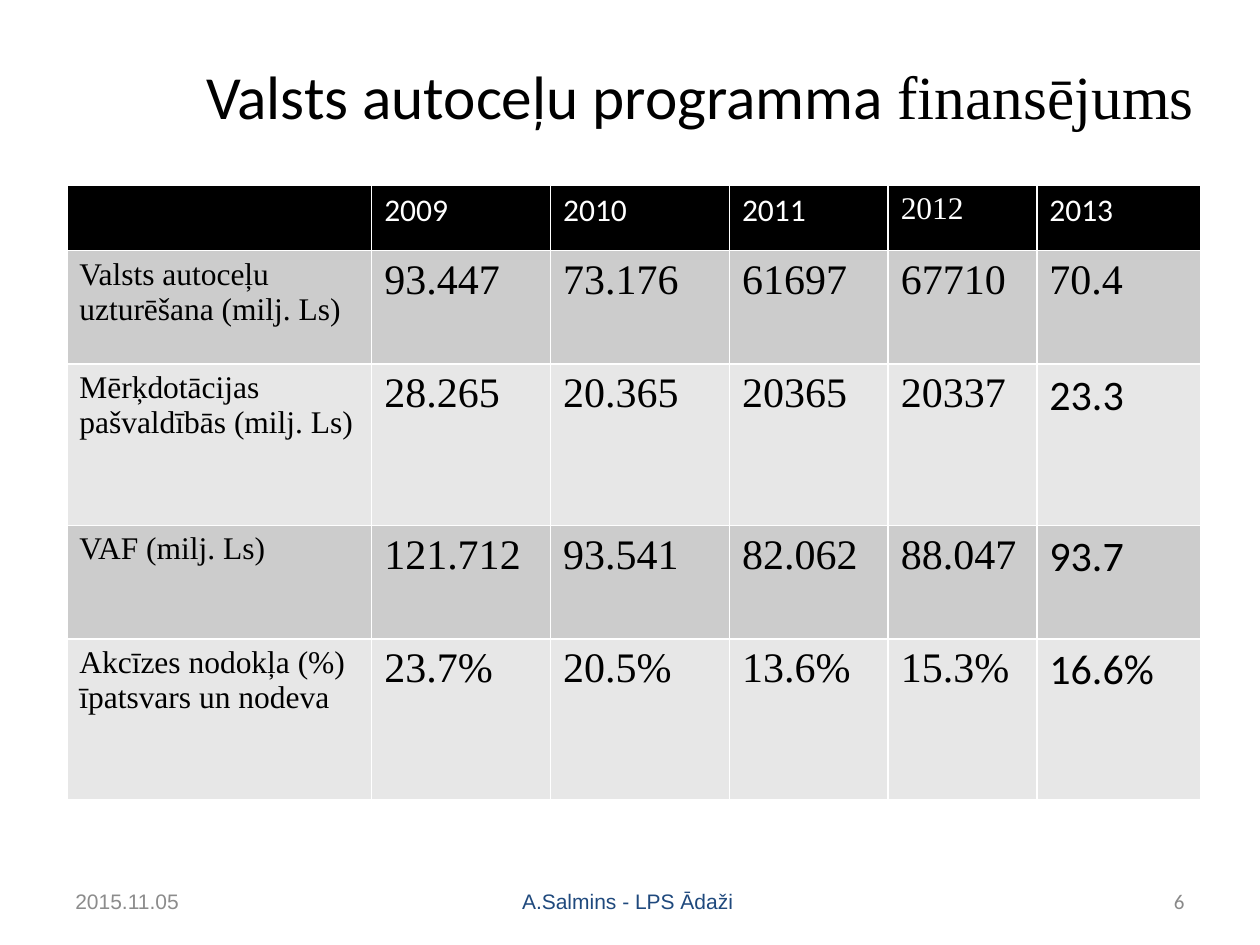
from lxml.etree import SubElement
from pptx import Presentation
from pptx.dml.color import RGBColor
from pptx.enum.text import MSO_ANCHOR, PP_ALIGN
from pptx.oxml.ns import qn
from pptx.util import Inches, Pt

COLORS = {
    "text": "000000",
    "header": "000000",
    "white": "FFFFFF",
    "band": ["CCCCCC", "E7E7E7"],
    "footer": "1F497D",
    "number": "898989",
    "date": "8C8C8C",
}
SANS, SERIF, FOOT = "Calibri", "Times New Roman", "Arial"
GRID_COLS, GRID_ROWS = 100, 75

COL_WIDTHS = [24.2, 14.2, 14.2, 12.6, 11.8, 13]
ROW_HEIGHTS = [5.2, 9, 12.8, 9, 12.8]
ROWS = [
    ["", "2009", "2010", "2011", "2012", "2013"],
    ["Valsts autoceļu uzturēšana (milj. Ls)", "93.447", "73.176", "61697", "67710", "70.4"],
    ["Mērķdotācijas pašvaldībās (milj. Ls)", "28.265", "20.365", "20365", "20337", "23.3"],
    ["VAF (milj. Ls)", "121.712", "93.541", "82.062", "88.047", "93.7"],
    ["Akcīzes nodokļa (%) īpatsvars un nodeva", "23.7%", "20.5%", "13.6%", "15.3%", "16.6%"],
]


class Deck:
    def __init__(self):
        self.prs = Presentation()
        self.prs.slide_width, self.prs.slide_height = Inches(10), Inches(7.5)
        self.slide = self.prs.slides.add_slide(self.prs.slide_layouts[6])

    def x(self, cols):
        return round(self.prs.slide_width * cols / GRID_COLS)

    def y(self, rows):
        return round(self.prs.slide_height * rows / GRID_ROWS)

    def style(self, p, size, color, font=None):
        p.font.size = Pt(size)
        p.font.bold = False
        p.font.color.rgb = RGBColor.from_string(color)
        if font:
            p.font.name = font

    def text(self, left, top, width, height, runs, size, color, align):
        sp = self.slide.shapes.add_textbox(self.x(left), self.y(top), self.x(width), self.y(height))
        tf = sp.text_frame
        tf.word_wrap = True
        tf.vertical_anchor = MSO_ANCHOR.MIDDLE
        p = tf.paragraphs[0]
        p.alignment = align
        self.style(p, size, color)
        for content, font in runs:
            r = p.add_run()
            r.text = content
            r.font.name = font

    def borders(self, cell, color, width):
        tc_pr = cell._tc.get_or_add_tcPr()
        for i, side in enumerate(("lnL", "lnR", "lnT", "lnB")):
            ln = SubElement(tc_pr, qn(f"a:{side}"), w=str(Pt(width)))
            fill = SubElement(ln, qn("a:solidFill"))
            SubElement(fill, qn("a:srgbClr"), val=color)
            tc_pr.insert(i, ln)

    def cell(self, cell, content, size, color, font, fill):
        cell.fill.solid()
        cell.fill.fore_color.rgb = RGBColor.from_string(fill)
        self.borders(cell, COLORS["white"], 1)
        cell.text = content
        self.style(cell.text_frame.paragraphs[0], size, color, font)

    def table(self, left, top, rows, widths, heights):
        frame = self.slide.shapes.add_table(
            len(rows), len(widths), self.x(left), self.y(top), self.x(sum(widths)), self.y(sum(heights))
        )
        tbl = frame.table
        for column, width in zip(tbl.columns, widths):
            column.width = self.x(width)
        for row, height in zip(tbl.rows, heights):
            row.height = self.y(height)
        last = len(widths) - 1
        for i, row in enumerate(rows):
            for j, content in enumerate(row):
                if i == 0:
                    font = SERIF if content == "2012" else SANS
                    size, color, fill = 18, COLORS["white"], COLORS["header"]
                else:
                    font = SANS if j == last and i > 1 else SERIF
                    size = 24 if j else 18
                    color, fill = COLORS["text"], COLORS["band"][(i - 1) % 2]
                self.cell(tbl.cell(i, j), content, size, color, font, fill)


def main():
    s = Deck()
    title = [("Valsts autoceļu programma ", SANS), ("finansējums", SERIF)]
    s.text(11.4, 3.6, 88.3, 7.9, title, 35, COLORS["text"], PP_ALIGN.CENTER)
    s.table(5.3, 14.7, ROWS, COL_WIDTHS, ROW_HEIGHTS)
    for left, width, content, font, color, align in (
        (34.2, 31.7, "A.Salmins - LPS Ādaži ", FOOT, "footer", PP_ALIGN.CENTER),
        (71.7, 23.3, "6", SANS, "number", PP_ALIGN.RIGHT),
        (5, 23.3, "2015.11.05", FOOT, "date", PP_ALIGN.LEFT),
    ):
        s.text(left, 69.5, width, 4, [(content, font)], 12, COLORS[color], align)
    s.prs.save("out.pptx")


if __name__ == "__main__":
    main()
